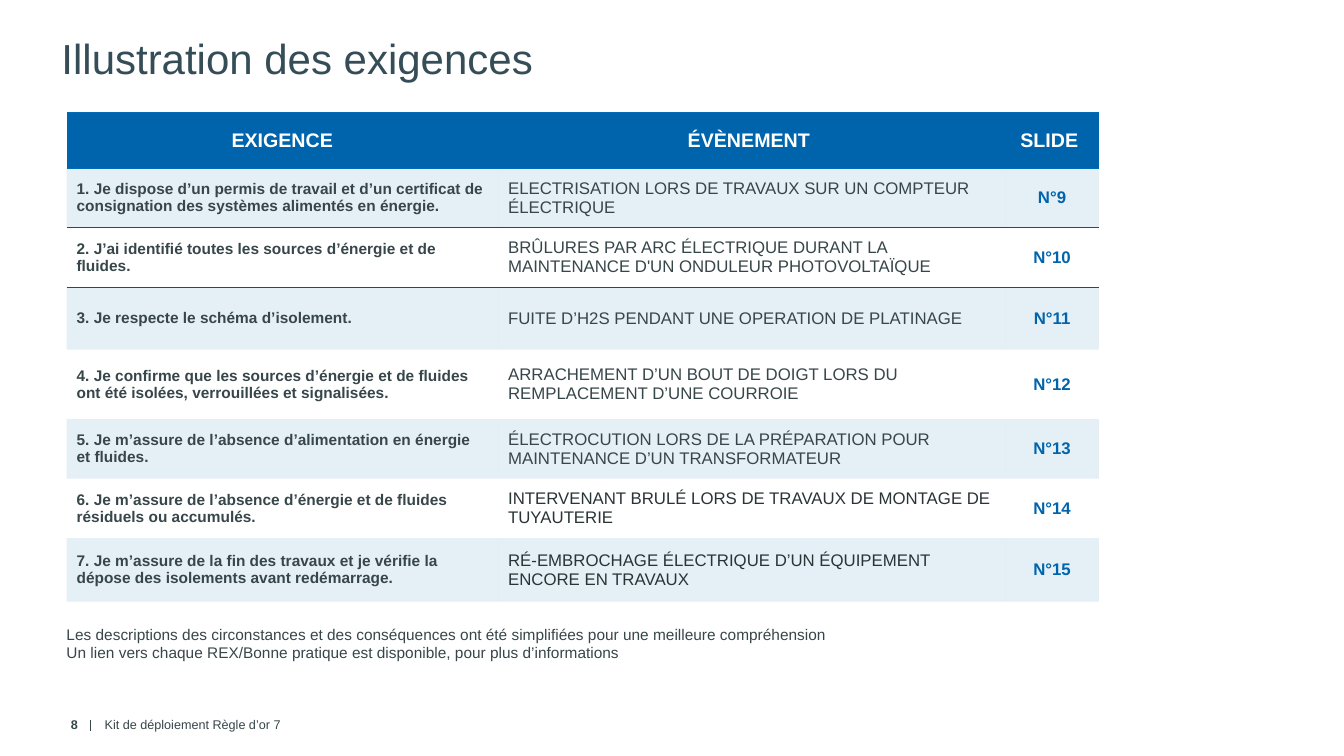
from lxml import etree
from pptx import Presentation
from pptx.dml.color import RGBColor
from pptx.enum.text import MSO_ANCHOR, MSO_AUTO_SIZE, PP_ALIGN
from pptx.oxml.ns import qn
from pptx.util import Inches, Pt

LEFT, CENTER, RIGHT = PP_ALIGN.LEFT, PP_ALIGN.CENTER, PP_ALIGN.RIGHT
TOP, MIDDLE = MSO_ANCHOR.TOP, MSO_ANCHOR.MIDDLE
NO_FIT = MSO_AUTO_SIZE.NONE
NO_STYLE = "{2D5ABB26-0587-4C30-8999-92F81FD0307C}"
FONT = "Arial"
COLORS = {"blue": "0064AC", "border": "006CB7", "text": "374649",
          "dark": "293437", "title": "354D56", "white": "FFFFFF"}

COL_WIDTHS = [4.28, 5.03, 0.93]
ROW_HEIGHTS = [0.55, 0.59, 0.59, 0.62, 0.69, 0.59, 0.59, 0.63]
HEADERS = ["EXIGENCE", "ÉVÈNEMENT ", "SLIDE "]
FIRST_SLIDE = 9
REQUIREMENTS = [
    ("1. Je dispose d’un permis de travail et d’un certificat de consignation "
     "des systèmes alimentés en énergie.",
     "ELECTRISATION LORS DE TRAVAUX SUR UN COMPTEUR ÉLECTRIQUE", "text"),
    ("2. J’ai identifié toutes les sources d’énergie et de fluides.",
     "BRÛLURES PAR ARC ÉLECTRIQUE DURANT LA MAINTENANCE D'UN ONDULEUR "
     "PHOTOVOLTAÏQUE", "text"),
    ("3. Je respecte le schéma d’isolement.",
     "FUITE D’H2S PENDANT UNE OPERATION DE PLATINAGE", "text"),
    ("4. Je confirme que les sources d’énergie et de fluides ont été isolées, "
     "verrouillées et signalisées.",
     "ARRACHEMENT D’UN BOUT DE DOIGT LORS DU REMPLACEMENT D’UNE COURROIE", "text"),
    ("5. Je m’assure de l’absence d’alimentation en énergie et fluides.",
     "ÉLECTROCUTION LORS DE LA PRÉPARATION POUR MAINTENANCE D’UN "
     "TRANSFORMATEUR", "text"),
    ("6. Je m’assure de l’absence d’énergie et de fluides résiduels ou accumulés.",
     "INTERVENANT BRULÉ LORS DE TRAVAUX DE MONTAGE DE TUYAUTERIE", "dark"),
    ("7. Je m’assure de la fin des travaux et je vérifie la dépose des "
     "isolements avant redémarrage.",
     "RÉ-EMBROCHAGE ÉLECTRIQUE D’UN ÉQUIPEMENT ENCORE EN TRAVAUX", "dark"),
]
NOTES = [
    "Les descriptions des circonstances et des conséquences ont été simplifiées "
    "pour une meilleure compréhension",
    "Un lien vers chaque REX/Bonne pratique est disponible, pour plus "
    "d’informations",
]


def rgb(name):
    return RGBColor.from_string(COLORS[name])


def write(tf, lines, size, color, bold=False, align=LEFT):
    p = tf.paragraphs[0]
    p.alignment = align
    for i, line in enumerate(lines):
        if i:
            p.add_line_break()
        r = p.add_run()
        r.text = line
        r.font.name, r.font.size, r.font.bold = FONT, Pt(size), bold
        r.font.color.rgb = rgb(color)


def add_text(s, x, y, w, h, lines, size, anchor=MIDDLE, margin=None, **style):
    tf = s.shapes.add_textbox(Inches(x), Inches(y), Inches(w), Inches(h)).text_frame
    tf.word_wrap = True
    tf.vertical_anchor = anchor
    if margin is not None:
        tf.margin_left = tf.margin_right = Inches(margin)
        tf.margin_top = tf.margin_bottom = Inches(margin)
    write(tf, lines, size, "text", **style)


def add_title(s, x, y, w, h):
    title = s.shapes.title
    title.left, title.top = Inches(x), Inches(y)
    title.width, title.height = Inches(w), Inches(h)
    tf = title.text_frame
    tf.word_wrap = True
    tf.auto_size = NO_FIT
    tf.vertical_anchor = TOP
    write(tf, ["Illustration des exigences"], 30, "title")


def set_border(cell, side, color, width):
    ln = etree.SubElement(cell._tc.get_or_add_tcPr(), qn("a:" + side),
                          w=str(Pt(width)))
    fill = etree.SubElement(ln, qn("a:solidFill"))
    etree.SubElement(fill, qn("a:srgbClr"), val=COLORS[color])


def fill_cell(cell, opacity):
    if not opacity:
        cell.fill.background()
        return
    cell.fill.solid()
    cell.fill.fore_color.rgb = rgb("blue")
    if opacity < 100:
        clr = cell._tc.tcPr.find(qn("a:solidFill")).find(qn("a:srgbClr"))
        etree.SubElement(clr, qn("a:alpha"), val=str(opacity * 1000))


def add_requirements_table(s, x, y):
    table = s.shapes.add_table(
        len(ROW_HEIGHTS), len(COL_WIDTHS), Inches(x), Inches(y),
        Inches(sum(COL_WIDTHS)), Inches(sum(ROW_HEIGHTS))).table
    table._tbl.tblPr.find(qn("a:tableStyleId")).text = NO_STYLE
    table.horz_banding = False
    for col, width in zip(table.columns, COL_WIDTHS):
        col.width = Inches(width)
    for row, height in zip(table.rows, ROW_HEIGHTS):
        row.height = Inches(height)

    # Each cell: text, size, colour, bold, alignment
    rows = [[(h, 14, "white", True, CENTER) for h in HEADERS]]
    for i, (requirement, event, color) in enumerate(REQUIREMENTS):
        rows.append([(requirement, 11, "text", True, LEFT),
                     (event, 12, color, False, LEFT),
                     (f"N°{FIRST_SLIDE + i}", 12, "blue", True, CENTER)])

    for i, row in enumerate(rows):
        for j, (text, *style) in enumerate(row):
            cell = table.cell(i, j)
            cell.vertical_anchor = MIDDLE
            write(cell.text_frame, [text], *style)
            # Borders come before the fill in the cell properties
            if i < 2:
                set_border(cell, "lnT", "border", 1)
                set_border(cell, "lnB", *[("border", 1), ("text", 0.75)][i])
            elif i == 2:
                set_border(cell, "lnT", "text", 0.75)
            fill_cell(cell, 100 if i == 0 else 10 * (i % 2))


def add_footer(s, x, y, h):
    add_text(s, x, y, 0.63, h, ["8"], 9, bold=True, align=RIGHT)
    line = s.shapes.add_connector(1, Inches(x + 0.66), Inches(y + 0.09),
                                  Inches(x + 0.66), Inches(y + 0.2))
    line.line.color.rgb = rgb("text")
    line.line.width = Pt(1)
    etree.SubElement(line._element.spPr, qn("a:effectLst"))
    add_text(s, x + 0.7, y, 3.94, h, ["Kit de déploiement Règle d’or 7"], 9)


def main():
    prs = Presentation()
    prs.slide_width, prs.slide_height = Inches(13.33), Inches(7.5)
    s = prs.slides.add_slide(prs.slide_layouts[5])
    add_footer(s, 0.24, 7.05, 0.28)
    add_text(s, 0.66, 6.2, 10.63, 0.37, NOTES, 11, anchor=TOP, margin=0)
    add_title(s, 0.51, 0.27, 10.63, 1.1)
    add_requirements_table(s, 0.66, 1.12)
    prs.save("out.pptx")


if __name__ == "__main__":
    main()
